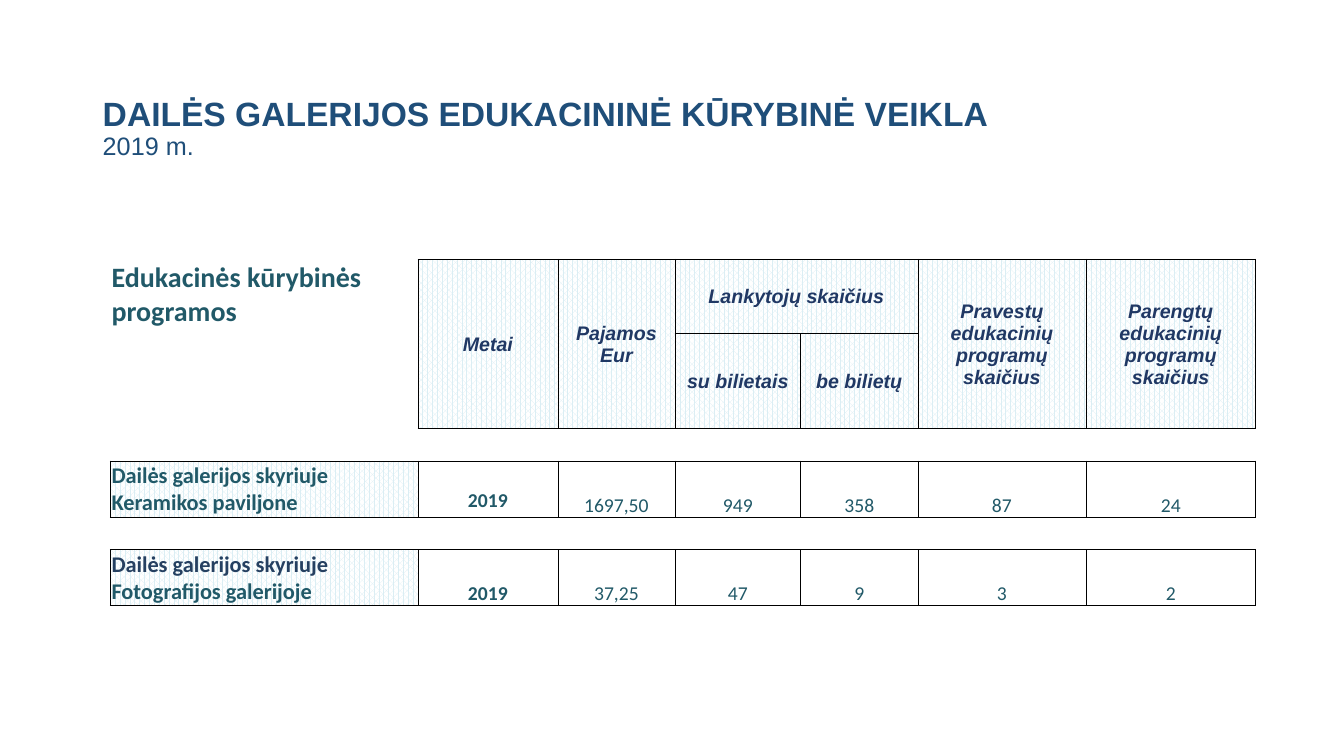
from dataclasses import dataclass

from lxml.etree import SubElement
from pptx import Presentation
from pptx.dml.color import RGBColor as Rgb
from pptx.enum.dml import MSO_PATTERN_TYPE as Pattern
from pptx.enum.text import MSO_ANCHOR as Anchor, PP_ALIGN as Align
from pptx.oxml.ns import qn
from pptx.util import Cm, Pt


@dataclass(frozen=True)
class Theme:
    title: str = "1F4E79"
    header: str = "203864"
    body: str = "215968"
    accent: str = "254061"
    border: str = "000000"
    hatch: str = "DBEEF4"
    paper: str = "FFFFFF"
    heading_font: str = "Arial"
    body_font: str = "Calibri"
    title_size: int = 24
    subtitle_size: int = 18
    corner_size: int = 20
    label_size: int = 16
    cell_size: int = 14
    spacer_size: int = 10
    border_width: float = 0.5
    plain_style: str = "{2D5ABB26-0587-4C30-8999-92F81FD0307C}"


COLUMNS = (7.75, 3.53, 2.95, 3.17, 2.95, 4.24, 4.27)
ROWS = (1.87, 2.25, 0.81, 1.42, 0.81, 1.42)
MERGES = ((0, 0, 1, 0), (0, 1, 1, 1), (0, 2, 1, 2), (0, 3, 0, 4), (0, 5, 1, 5), (0, 6, 1, 6))
HEADERS = {
    (0, 1): "Metai",
    (0, 2): "Pajamos\nEur",
    (0, 3): "Lankytojų skaičius",
    (0, 5): "Pravestų edukacinių programų skaičius",
    (0, 6): "Parengtų\nedukacinių programų skaičius",
    (1, 3): "su bilietais",
    (1, 4): "be bilietų",
}
RECORDS = {
    3: ("Dailės galerijos skyriuje\nKeramikos paviljone", "2019", "1697,50", "949", "358", "87", "24"),
    5: ("Dailės galerijos skyriuje\nFotografijos galerijoje", "2019", "37,25", "47", "9", "3", "2"),
}


class Page:
    """Holds the theme and the current slide."""

    def __init__(self, deck, theme):
        """Add a blank slide to the deck."""
        self.theme = theme
        self.slide = deck.slides.add_slide(deck.slide_layouts[6])

    def style(self, span, font, size, color, bold=True, italic=False):
        """Format one run."""
        span.font.name = font
        span.font.size = Pt(size)
        span.font.color.rgb = Rgb.from_string(color)
        span.font.bold = bold
        span.font.italic = italic

    def title(self, heading, subtitle):
        """Place the heading and the subtitle below it."""
        theme = self.theme
        box = self.slide.shapes.add_textbox(Cm(2.34), Cm(1.27), Cm(28.45), Cm(2.9))
        frame = box.text_frame
        frame.word_wrap = True
        frame.vertical_anchor = Anchor.BOTTOM
        frame.text = f"{heading}\v{subtitle}"
        para = frame.paragraphs[0]
        para.line_spacing = 0.9
        first, second = para.runs
        self.style(first, theme.heading_font, theme.title_size, theme.title)
        self.style(second, theme.heading_font, theme.subtitle_size, theme.title, bold=False)

    def table(self, left, top, columns, rows, merges):
        """Place an unstyled table and return it."""
        frame = self.slide.shapes.add_table(
            len(rows), len(columns), Cm(left), Cm(top), Cm(sum(columns)), Cm(sum(rows)))
        table = frame.table
        table.first_row = table.horz_banding = False
        table._tbl.tblPr.find(qn("a:tableStyleId")).text = self.theme.plain_style
        for column, width in zip(table.columns, columns):
            column.width = Cm(width)
        for row, height in zip(table.rows, rows):
            row.height = Cm(height)
        for top_row, first, bottom_row, last in merges:
            table.cell(top_row, first).merge(table.cell(bottom_row, last))
        return table

    def frame_cell(self, cell, sides, hatched):
        """Set margins, borders and fill of a cell."""
        theme = self.theme
        cell.margin_left = cell.margin_right = cell.margin_top = Cm(0.03)
        cell.margin_bottom = Cm(0)
        properties = cell._tc.get_or_add_tcPr()
        for side in "LRTB":
            line = SubElement(properties, qn(f"a:ln{side}"), w=str(Pt(theme.border_width)))
            if side in sides:
                paint = SubElement(line, qn("a:solidFill"))
                SubElement(paint, qn("a:srgbClr"), val=theme.border)
            else:
                SubElement(line, qn("a:noFill"))
        if hatched:
            cell.fill.patterned()
            cell.fill.pattern = Pattern.PERCENT_70
            cell.fill.fore_color.rgb = Rgb.from_string(theme.hatch)
            cell.fill.back_color.rgb = Rgb.from_string(theme.paper)
        else:
            cell.fill.background()

    def write_cell(self, cell, text, anchor, align, font, size, color, bold=True, italic=False):
        """Write formatted text into a cell."""
        cell.text_frame.text = text
        cell.vertical_anchor = anchor
        for para in cell.text_frame.paragraphs:
            para.alignment = align
            for span in para.runs:
                self.style(span, font, size, color, bold, italic)

    def blank_cell(self, cell):
        """Keep an empty cell low."""
        para = cell.text_frame.paragraphs[0]
        SubElement(para._p, qn("a:endParaRPr"), sz=str(self.theme.spacer_size * 100))


def cell_sides(row, column):
    """Return the bordered sides of a cell."""
    if row in (2, 4):
        return "B" if (row, column) == (2, 0) else "TB"
    if row < 2 and column == 0:
        return "R"
    return "LRTB"


def fill_table(page):
    """Build the table of educational programmes."""
    theme = page.theme
    table = page.table(2.78, 6.53, COLUMNS, ROWS, MERGES)
    for row in range(len(ROWS)):
        for column in range(len(COLUMNS)):
            cell = table.cell(row, column)
            hatched = column > 0 if row < 2 else row in RECORDS and column == 0
            page.frame_cell(cell, cell_sides(row, column), hatched)
            if (row, column) in HEADERS:
                page.write_cell(cell, HEADERS[row, column], Anchor.MIDDLE, Align.CENTER,
                                theme.heading_font, theme.cell_size, theme.header, italic=True)
            elif row in RECORDS and column == 0:
                page.write_cell(cell, RECORDS[row][0], Anchor.MIDDLE, Align.LEFT,
                                theme.body_font, theme.label_size, theme.body)
            elif row in RECORDS:
                page.write_cell(cell, RECORDS[row][column], Anchor.BOTTOM, Align.CENTER,
                                theme.body_font, theme.cell_size, theme.body, bold=column == 1)
            elif (row, column) != (0, 0):
                page.blank_cell(cell)
    page.write_cell(table.cell(0, 0), "Edukacinės kūrybinės programos", Anchor.TOP, Align.LEFT,
                    theme.body_font, theme.corner_size, theme.body)
    table.cell(3, 1).margin_bottom = Cm(0.12)
    gallery = table.cell(5, 0).text_frame.paragraphs[0].runs[0]
    gallery.font.color.rgb = Rgb.from_string(theme.accent)


def main():
    """Build and save the deck."""
    deck = Presentation()
    deck.slide_width, deck.slide_height = Cm(33.87), Cm(19.05)
    page = Page(deck, Theme())
    page.title("DAILĖS GALERIJOS EDUKACININĖ KŪRYBINĖ VEIKLA", "2019 m.")
    fill_table(page)
    deck.save("out.pptx")


if __name__ == "__main__":
    main()
